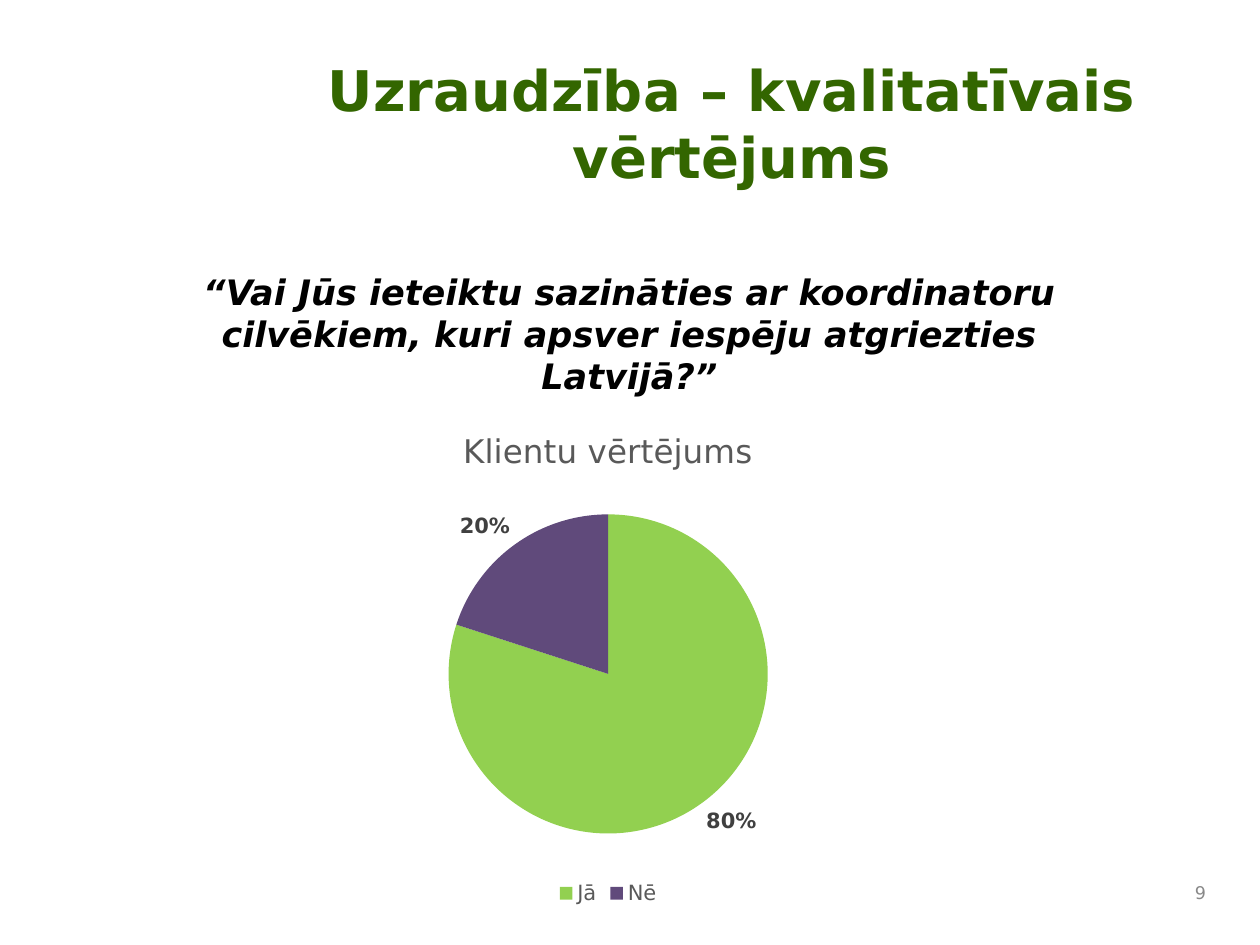
from pptx import Presentation
from pptx.chart.data import CategoryChartData
from pptx.dml.color import RGBColor
from pptx.enum.chart import XL_CHART_TYPE, XL_LABEL_POSITION, XL_LEGEND_POSITION
from pptx.enum.text import MSO_ANCHOR, PP_ALIGN
from pptx.util import Cm, Pt

PIE = XL_CHART_TYPE.PIE
OUTSIDE_END = XL_LABEL_POSITION.OUTSIDE_END
LEGEND_BOTTOM = XL_LEGEND_POSITION.BOTTOM
TOP, MIDDLE = MSO_ANCHOR.TOP, MSO_ANCHOR.MIDDLE
CENTER, RIGHT = PP_ALIGN.CENTER, PP_ALIGN.RIGHT

FONT = "DejaVu Sans"
BLACK = RGBColor(0x00, 0x00, 0x00)
DARK_GREEN = RGBColor(0x33, 0x66, 0x00)
LIME = RGBColor(0x92, 0xD0, 0x50)
PURPLE = RGBColor(0x60, 0x4A, 0x7B)
LABEL_GREY = RGBColor(0x40, 0x40, 0x40)
CHART_GREY = RGBColor(0x59, 0x59, 0x59)
NUMBER_GREY = RGBColor(0x89, 0x89, 0x89)


def set_font(font, size, color, bold=False, italic=False):
    font.name = FONT
    font.size = Pt(size)
    font.color.rgb = color
    font.bold = bold
    font.italic = italic


def add_text(s, box, text, size, color, align=CENTER, anchor=TOP,
             bold=False, italic=False):
    tf = s.shapes.add_textbox(*box).text_frame
    tf.word_wrap = True
    tf.vertical_anchor = anchor
    tf.text = text
    p = tf.paragraphs[0]
    p.alignment = align
    set_font(p.runs[0].font, size, color, bold, italic)


def add_rating_chart(s, box):
    data = CategoryChartData(number_format="0%")
    data.categories = ["Jā", "Nē"]
    data.add_series("Klientu vērtējums", [0.8, 0.2])
    chart = s.shapes.add_chart(PIE, *box, data).chart
    set_font(chart.font, 10, BLACK)

    chart.has_title = True
    title = chart.chart_title
    title.include_in_layout = False
    title.text_frame.text = "Klientu vērtējums"
    set_font(title.text_frame.paragraphs[0].runs[0].font, 18.6, CHART_GREY)

    chart.has_legend = True
    chart.legend.position = LEGEND_BOTTOM
    chart.legend.include_in_layout = False
    set_font(chart.legend.font, 12, CHART_GREY)

    plot = chart.plots[0]
    plot.vary_by_categories = True
    for i, color in enumerate([LIME, PURPLE]):
        point = plot.series[0].points[i]
        point.format.fill.solid()
        point.format.fill.fore_color.rgb = color
        point.format.line.fill.background()

    plot.has_data_labels = True
    labels = plot.data_labels
    labels.show_value = True
    labels.show_percentage = False
    labels.number_format = "0%"
    labels.number_format_is_linked = False
    labels.position = OUTSIDE_END
    set_font(labels.font, 12, LABEL_GREY, bold=True)


def build_rating_slide(prs):
    s = prs.slides.add_slide(prs.slide_layouts[6])
    add_text(s, (Cm(3.33), Cm(5.28), Cm(18.72), Cm(2.87)),
             "“Vai Jūs ieteiktu sazināties ar koordinatoru cilvēkiem, "
             "kuri apsver iespēju atgriezties Latvijā?”",
             20, BLACK, anchor=MIDDLE, bold=True, italic=True)
    add_rating_chart(s, (Cm(0.4), Cm(8.2), Cm(23.72), Cm(10.16)))
    add_text(s, (Cm(4.52), Cm(1), Cm(20.47), Cm(2.87)),
             "Uzraudzība – kvalitatīvais vērtējums",
             32, DARK_GREEN, bold=True)
    add_text(s, (Cm(22.6), Cm(17.58), Cm(1.96), Cm(0.84)),
             "9", 10, NUMBER_GREY, align=RIGHT, anchor=MIDDLE)


def main():
    prs = Presentation()
    prs.slide_width, prs.slide_height = Cm(25.4), Cm(19.05)
    build_rating_slide(prs)
    prs.save("out.pptx")


if __name__ == "__main__":
    main()
